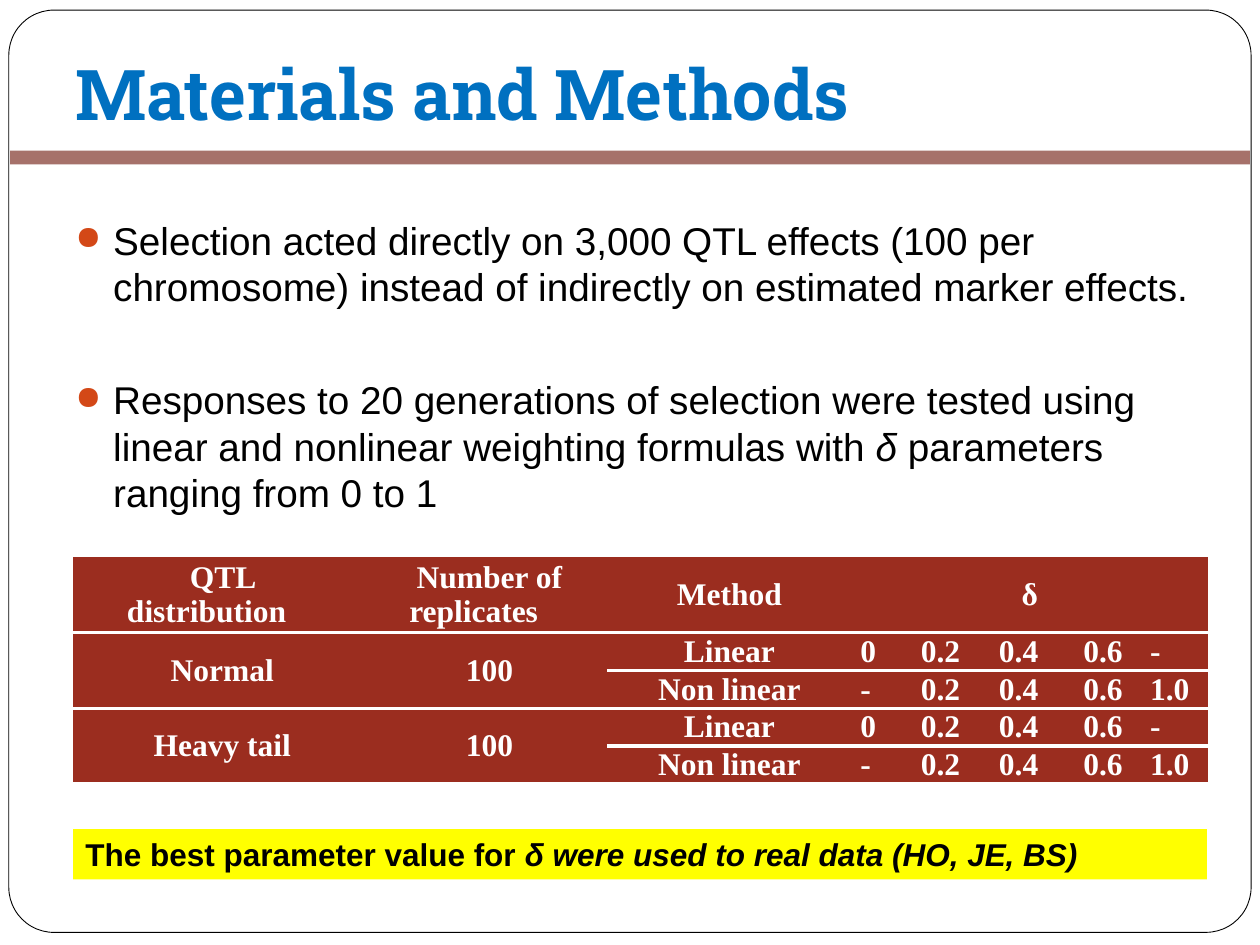
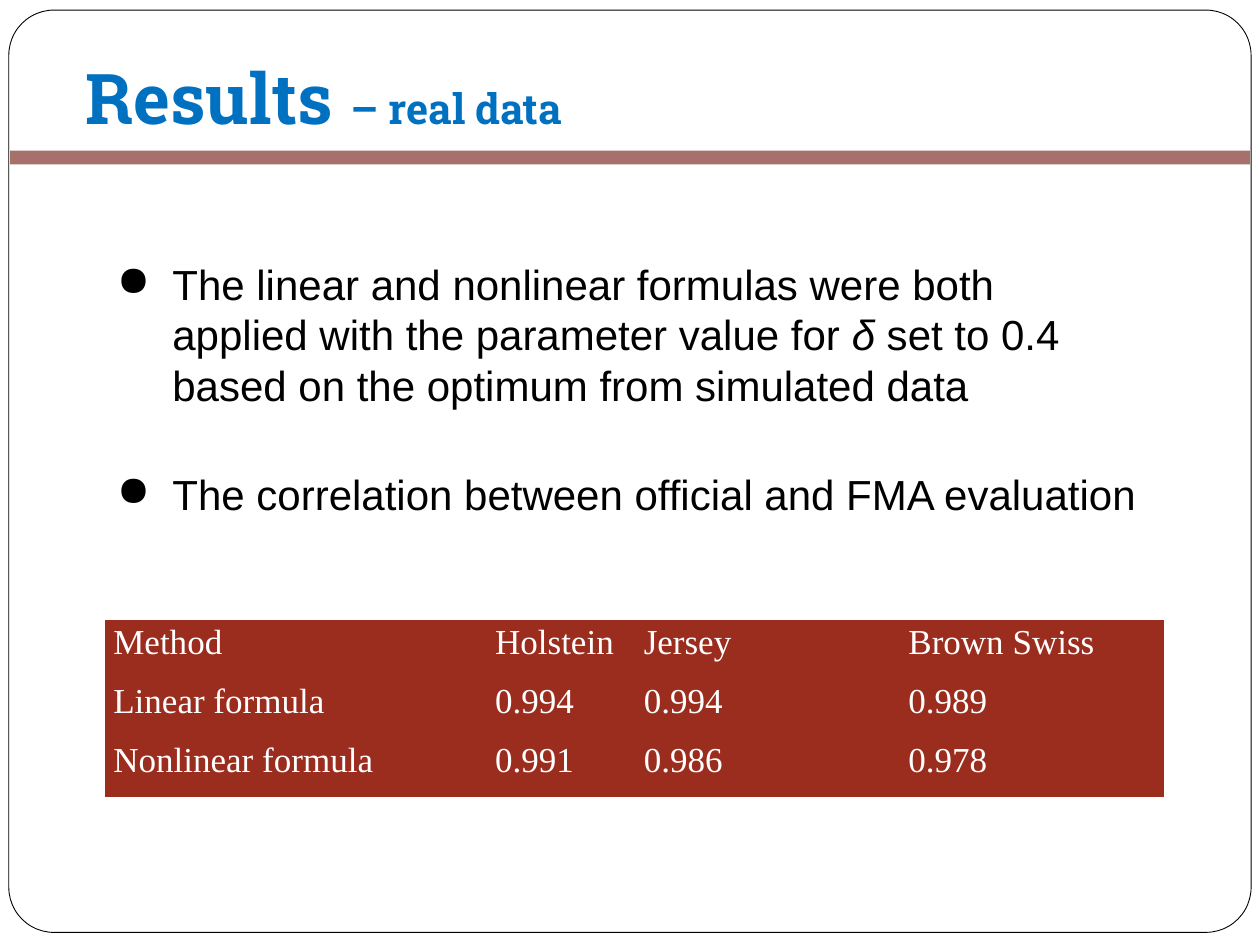
from pptx import Presentation
from pptx.dml.color import RGBColor
from pptx.enum.shapes import MSO_CONNECTOR, MSO_SHAPE
from pptx.enum.text import MSO_ANCHOR, PP_ALIGN
from pptx.oxml.ns import qn
from pptx.util import Inches, Pt
from lxml import etree

BLACK = RGBColor(0x00, 0x00, 0x00)
WHITE = RGBColor(0xFF, 0xFF, 0xFF)
BLUE = RGBColor(0x00, 0x70, 0xC0)
BAND = RGBColor(0x74, 0x22, 0x17)
BRICK = RGBColor(0x9B, 0x2D, 0x1F)
ORANGE = RGBColor(0xD3, 0x48, 0x17)
YELLOW = RGBColor(0xFF, 0xFF, 0x00)

TITLE_FONT, BODY_FONT, TABLE_FONT = "Roboto Slab", "Arial", "Times New Roman"
ROUNDED = MSO_SHAPE.ROUNDED_RECTANGLE
STRAIGHT = MSO_CONNECTOR.STRAIGHT
BOTTOM, MIDDLE, TOP = MSO_ANCHOR.BOTTOM, MSO_ANCHOR.MIDDLE, MSO_ANCHOR.TOP
CENTER, LEFT = PP_ALIGN.CENTER, PP_ALIGN.LEFT
PLAIN_TABLE = "{2D5ABB26-0587-4C30-8999-92F81FD0307C}"


def style_run(r, size, font, color, bold=False, italic=False):
    r.font.size = Pt(size)
    r.font.name = font
    r.font.color.rgb = color
    r.font.bold = bold
    r.font.italic = italic


def add_runs(p, parts, size, bold=False):
    for text, italic in parts:
        r = p.add_run()
        r.text = text
        style_run(r, size, BODY_FONT, BLACK, bold, italic)


def set_indent(p, margin, first_line):
    pPr = p._p.get_or_add_pPr()
    pPr.set("marL", str(Inches(margin)))
    pPr.set("indent", str(Inches(first_line)))
    return pPr


def add_bullet(p, hanging, color=None, percent=None):
    pPr = set_indent(p, hanging, -hanging)
    if color is not None:
        bu_color = etree.SubElement(pPr, qn("a:buClr"))
        etree.SubElement(bu_color, qn("a:srgbClr"), val=str(color))
    if percent:
        etree.SubElement(pPr, qn("a:buSzPct"), val=str(percent * 1000))
    etree.SubElement(pPr, qn("a:buChar"), char="●")


def add_text_box(s, left, top, width, height):
    box = s.shapes.add_textbox(Inches(left), Inches(top), Inches(width), Inches(height))
    box.text_frame.word_wrap = True
    return box


def add_frame(s):
    frame = s.shapes.add_shape(ROUNDED, Inches(0.07), Inches(0.08), Inches(9.86), Inches(7.32))
    frame.adjustments[0] = 0.049
    frame.shadow.inherit = False
    frame.fill.solid()
    frame.fill.fore_color.rgb = WHITE
    frame.line.color.rgb = BLACK
    frame.line.width = Pt(0.5)


def add_band(s):
    band = s.shapes.add_connector(STRAIGHT, Inches(0.08), Inches(1.25), Inches(9.92), Inches(1.25))
    band.line.color.rgb = BAND
    band.line.width = Pt(8)
    spPr = band._element.spPr
    etree.SubElement(spPr.find(".//" + qn("a:srgbClr")), qn("a:alpha"), val="63000")
    etree.SubElement(spPr, qn("a:effectLst"))


def add_title(s, left, top, parts):
    tf = add_text_box(s, left, top, 8.5, 0.95).text_frame
    tf.vertical_anchor = BOTTOM
    tf.margin_bottom = Inches(0.1)
    for text, size in parts:
        r = tf.paragraphs[0].add_run()
        r.text = text
        style_run(r, size, TITLE_FONT, BLUE, bold=True)


def new_slide(prs):
    s = prs.slides.add_slide(prs.slide_layouts[6])
    add_frame(s)
    add_band(s)
    return s


def add_plain_table(s, left, top, col_widths, row_heights):
    frame = s.shapes.add_table(len(row_heights), len(col_widths), Inches(left), Inches(top),
                               Inches(sum(col_widths)), Inches(sum(row_heights)))
    table = frame.table
    table.first_row = table.horz_banding = False
    table._tbl.tblPr.find(qn("a:tableStyleId")).text = PLAIN_TABLE
    for column, width in zip(table.columns, col_widths):
        column.width = Inches(width)
    for row, height in zip(table.rows, row_heights):
        row.height = Inches(height)
    for cell in table.iter_cells():
        cell.fill.solid()
        cell.fill.fore_color.rgb = BRICK
        cell.margin_left = cell.margin_right = Inches(0.07)
        cell.margin_top = cell.margin_bottom = 0
    return table


def fill_cell(cell, text, size, bold=False, anchor=TOP):
    cell.vertical_anchor = anchor
    p = cell.text_frame.paragraphs[0]
    p.text = text
    style_run(p.runs[0], size, TABLE_FONT, WHITE, bold)
    return p


def add_rule(cell, edge):
    ln = etree.Element(qn("a:" + edge), w=str(Pt(2.25)))
    fill = etree.SubElement(ln, qn("a:solidFill"))
    etree.SubElement(fill, qn("a:srgbClr"), val=str(WHITE))
    cell._tc.get_or_add_tcPr().insert(0, ln)


def add_design_table(s):
    linear = ["Linear", "0", "0.2", "0.4", "0.6", "-"]
    nonlinear = ["Non linear", "-", "0.2", "0.4", "0.6", "1.0"]
    rows = [
        ["QTL distribution", "Number of replicates", "Method", "δ", "", "", "", ""],
        ["Normal", "100"] + linear,
        ["", ""] + nonlinear,
        ["Heavy tail", "100"] + linear,
        ["", ""] + nonlinear,
    ]
    table = add_plain_table(s, 0.58, 4.42, [2.12, 2.12, 1.69, 0.73, 0.62, 0.67, 0.53, 0.53],
                            [0.56] + [0.28] * 4)
    table.cell(0, 3).merge(table.cell(0, 7))
    for top_row in (1, 3):
        for col in (0, 1):
            table.cell(top_row, col).merge(table.cell(top_row + 1, col))
    for i, row in enumerate(rows):
        for j, text in enumerate(row):
            cell = table.cell(i, j)
            add_rule(cell, "lnB")
            if i in (1, 3):
                add_rule(cell, "lnT")
            if text:
                p = fill_cell(cell, text, 18, bold=True, anchor=MIDDLE)
                p.alignment = CENTER if i == 0 or j < 3 else LEFT
                if j < 4:
                    set_indent(p, 0, 0.25)


def add_correlation_table(s):
    rows = [
        ("Method", "Holstein", "Jersey", "Brown Swiss"),
        ("Linear formula", "0.994", "0.994", "0.989"),
        ("Nonlinear formula", "0.991", "0.986", "0.978"),
    ]
    table = add_plain_table(s, 0.83, 4.92, [3.03, 1.18, 2.1, 2.1], [0.47] * 3)
    for i, row in enumerate(rows):
        for j, text in enumerate(row):
            fill_cell(table.cell(i, j), text, 20).line_spacing = Pt(24)


def build_methods(prs):
    s = new_slide(prs)
    add_title(s, 0.5, 0.22, [("Materials and Methods", 40)])
    points = [
        [("Selection acted directly on 3,000 QTL effects (100 per chromosome) "
          "instead of indirectly on estimated marker effects.", False)],
        [("Responses to 20 generations of selection were tested using linear and "
          "nonlinear weighting formulas with ", False),
         ("δ", True), (" parameters ranging from 0 to 1", False)],
    ]
    tf = add_text_box(s, 0.5, 1.67, 9.08, 2.5).text_frame
    for i, parts in enumerate(points):
        p = tf.add_paragraph() if i else tf.paragraphs[0]
        p.space_before = Pt(38 if i else 5.8)
        add_bullet(p, 0.3, ORANGE, 85)
        add_runs(p, parts, 22.1)
    add_design_table(s)
    note = add_text_box(s, 0.58, 6.58, 9, 0.4)
    note.fill.solid()
    note.fill.fore_color.rgb = YELLOW
    add_runs(note.text_frame.paragraphs[0],
             [("The best parameter value for ", False),
              ("δ were used to real data (HO, JE, BS)", True)], 18, bold=True)


def build_results(prs):
    s = new_slide(prs)
    add_title(s, 0.58, 0.25, [("Results ", 40), ("– real data", 24)])
    points = [
        (2, 8.08, 1.31,
         [("The linear and nonlinear formulas were both applied with the parameter value for ", False),
          ("δ", True), (" set to 0.4 based on the optimum from simulated data", False)]),
        (3.67, 8.75, 0.5, [("The correlation between official and FMA evaluation", False)]),
    ]
    for top, width, height, parts in points:
        p = add_text_box(s, 0.83, top, width, height).text_frame.paragraphs[0]
        add_bullet(p, 0.44)
        add_runs(p, parts, 24)
    add_correlation_table(s)


def main():
    prs = Presentation()
    prs.slide_width = Inches(10)
    prs.slide_height = Inches(7.5)
    build_methods(prs)
    build_results(prs)
    prs.save("out.pptx")


if __name__ == "__main__":
    main()
